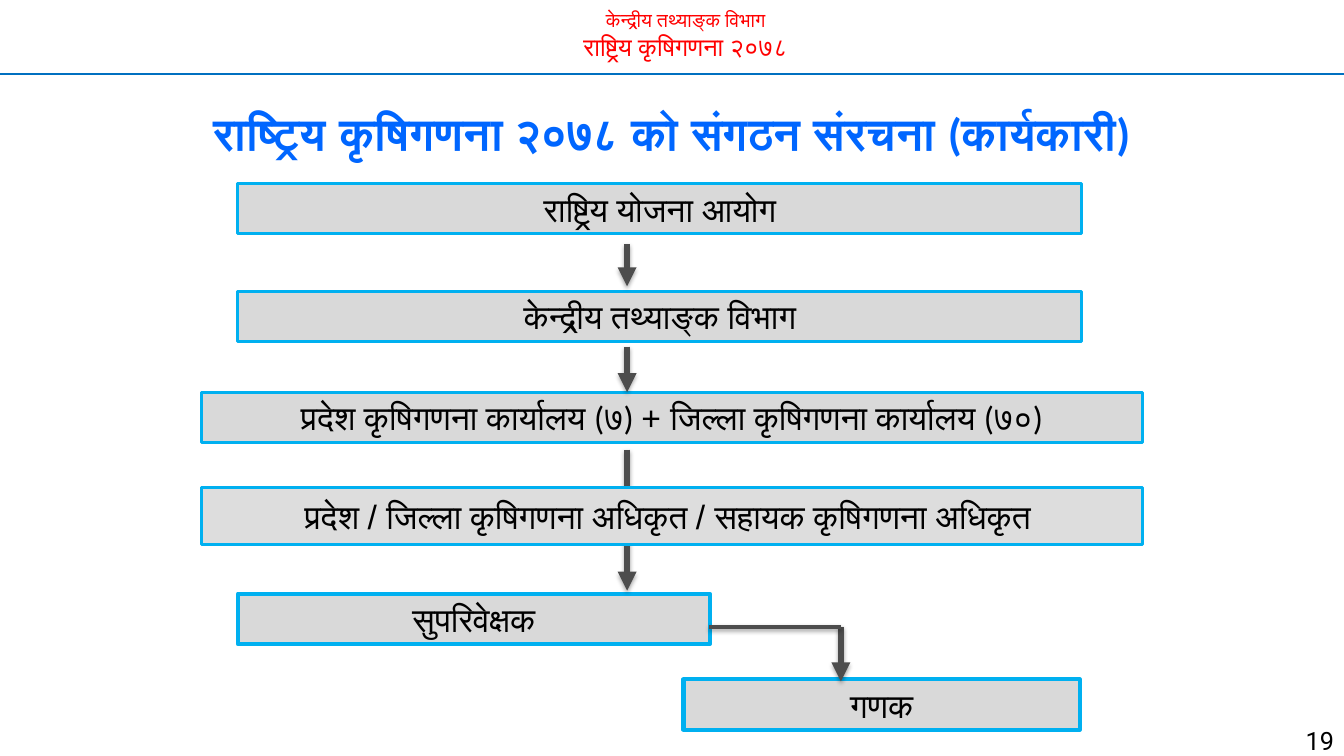
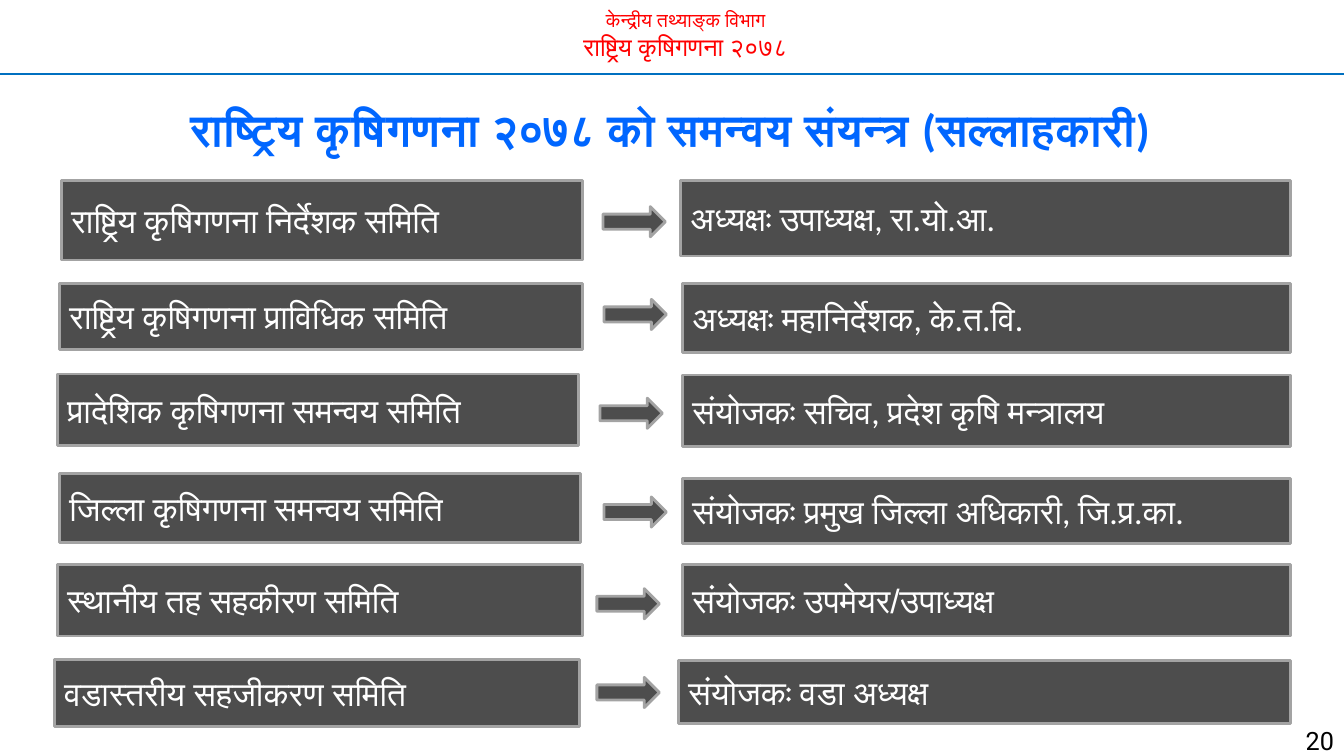
from lxml import etree
from pptx import Presentation
from pptx.dml.color import RGBColor
from pptx.enum.shapes import MSO_CONNECTOR as Connector, MSO_SHAPE as Preset
from pptx.enum.text import MSO_ANCHOR as Anchor, MSO_AUTO_SIZE as AutoSize, PP_ALIGN as Align
from pptx.oxml.ns import qn
from pptx.util import Inches, Pt

SLIDE_WIDTH, SLIDE_HEIGHT = 13.33, 7.5
RED, RULE_BLUE, TITLE_BLUE = "FF0000", "0070C0", "0066FF"
LIGHT_GREY, PALE_GREY, SKY_BLUE = "D9D9D9", "DDDDDD", "00B0F0"
DARK_GREY, EDGE_GREY, BLACK, WHITE = "4D4D4D", "A3A3A3", "000000", "FFFFFF"


def color(value):
    return RGBColor.from_string(value)


def inches(*values):
    return [Inches(value) for value in values]


def write_text(shape, text, size=24, hue=BLACK, font="Calibri", bold=False,
               align=Align.CENTER, anchor=Anchor.MIDDLE, spacing=None):
    frame = shape.text_frame
    frame.word_wrap = True
    frame.auto_size = AutoSize.NONE
    frame.vertical_anchor = anchor
    paragraph = frame.paragraphs[0]
    if paragraph.runs:
        paragraph = frame.add_paragraph()
    paragraph.alignment = align
    if spacing:
        paragraph.line_spacing = spacing
    parts = [(text, font)] if isinstance(text, str) else text
    for part, part_font in parts:
        run = paragraph.add_run()
        run.text = part
        run.font.name = part_font
        run.font.size = Pt(size)
        run.font.bold = bold
        run.font.color.rgb = color(hue)


def add_block(slide, preset, box, fill, line, weight):
    shape = slide.shapes.add_shape(preset, *inches(*box))
    shape.shadow.inherit = False
    shape.fill.solid()
    shape.fill.fore_color.rgb = color(fill)
    shape.line.color.rgb = color(line)
    shape.line.width = Pt(weight)
    return shape


def add_line(slide, start, end, hue, weight, arrow=False, shadow=False):
    line = slide.shapes.add_connector(Connector.STRAIGHT, *inches(*start, *end))
    line.line.color.rgb = color(hue)
    line.line.width = Pt(weight)
    properties = line.element.spPr
    if arrow:
        etree.SubElement(properties.find(qn("a:ln")), qn("a:tailEnd"), type="triangle")
    effects = etree.SubElement(properties, qn("a:effectLst"))
    if shadow:
        outer = etree.SubElement(effects, qn("a:outerShdw"), blurRad="40000",
                                 dist="23000", dir="5400000", rotWithShape="0")
        tint = etree.SubElement(outer, qn("a:srgbClr"), val=BLACK)
        etree.SubElement(tint, qn("a:alpha"), val="35000")
    return line


def move_header_to_master(presentation, slide):
    header = slide.shapes.add_textbox(*inches(1.25, 0.03, 11.1, 0.64))
    for text, size in (("केन्द्रीय तथ्याङ्क विभाग", 14), ("राष्ट्रिय कृषिगणना २०७८", 18)):
        write_text(header, text, size=size, hue=RED, anchor=Anchor.TOP)
    rule = add_line(slide, (0, 0.73), (SLIDE_WIDTH, 0.73), RULE_BLUE, 1.5)
    for shape in (header, rule):
        presentation.slide_master.shapes.element.append(shape.element)


def add_titled_slide(presentation, title_text, number, title_box, anchor):
    slide = presentation.slides.add_slide(presentation.slide_layouts[5])
    title = slide.shapes.title
    title.left, title.top, title.width, title.height = inches(*title_box)
    write_text(title, title_text, size=32, hue=TITLE_BLUE, bold=True,
               anchor=anchor, spacing=1.5)
    page = slide.shapes.add_textbox(*inches(12.3, 7, 1.03, 0.42))
    write_text(page, str(number), size=18, font="Roboto", align=Align.RIGHT,
               anchor=Anchor.TOP, spacing=1.5)
    return slide


def draw_hierarchy(slide, left, top, width):
    def add_level(text, x, y, level_width, height=0.5, fill=LIGHT_GREY, weight=2.25):
        box = (left + x, top + y, level_width, height)
        write_text(add_block(slide, Preset.RECTANGLE, box, fill, SKY_BLUE, weight), text)

    offices = [("प्रदेश कृषिगणना कार्यालय (७) ", "Calibri"), ("+ ", "Arial"),
               ("जिल्ला कृषिगणना कार्यालय (७०)", "Calibri")]
    officers = [("प्रदेश / जिल्ला", "Arial"), (" कृषिगणना अधिकृत", "Roboto"),
                (" / ", "Arial"), ("सहायक कृषिगणना अधिकृत ", "Roboto")]
    add_level("राष्ट्रिय योजना आयोग", 0.36, 0, 8.37)
    add_level("केन्द्रीय तथ्याङ्क विभाग", 0.36, 1.07, 8.37)
    add_level(offices, 0, 2.07, width)
    add_level("सुपरिवेक्षक", 0.36, 4.07, 4.68, weight=3)
    add_level("गणक", 4.78, 4.92, 3.93, weight=3)

    trunk, branch, bend = left + 4.22, left + 6.34, top + 4.4
    for x, start, end in ((trunk, 0.6, 1.02), (trunk, 1.62, 2.07),
                          (trunk, 2.64, 4.04), (branch, 4.4, 4.94)):
        add_line(slide, (x, top + start), (x, top + end), DARK_GREY, 4.5,
                 arrow=True, shadow=True)
    add_line(slide, (left + 5.03, bend), (branch, bend), DARK_GREY, 3, shadow=True)
    add_level(officers, 0, 3.02, width, height=0.56, fill=PALE_GREY, weight=2)


def draw_committees(slide, left, top, width):
    rows = [
        ("राष्ट्रिय कृषिगणना निर्देशक समिति", (0.11, 0, 5.17, 0.79),
         "अध्यक्षः उपाध्यक्ष, रा.यो.आ.", (6.25, 0, 0.75), (5.48, 0.26)),
        ("राष्ट्रिय कृषिगणना प्राविधिक समिति", (0.09, 1.02, 5.19, 0.66),
         "अध्यक्षः महानिर्देशक, के.त.वि.", (6.27, 1.02, 0.69), (5.49, 1.18)),
        ("प्रादेशिक कृषिगणना समन्वय समिति", (0.07, 1.92, 5.17, 0.71),
         "संयोजकः सचिव, प्रदेश कृषि मन्त्रालय", (6.27, 1.93, 0.71), (5.45, 2.16)),
        ("जिल्ला कृषिगणना समन्वय समिति", (0.09, 2.91, 5.17, 0.68),
         "संयोजकः प्रमुख जिल्ला अधिकारी, जि.प्र.का.", (6.27, 2.96, 0.64), (5.49, 3.14)),
        ("स्थानीय तह सहकीरण समिति", (0.07, 3.81, 5.21, 0.71),
         [("संयोजकः ", "Calibri"), ("उपमेयर/उपाध्यक्ष", "Arial")],
         (6.27, 3.81, 0.71), (5.42, 4.05)),
        ("वडास्तरीय सहजीकरण समिति", (0.04, 4.75, 5.21, 0.67),
         "संयोजकः वडा अध्यक्ष", (6.23, 4.76, 0.63), (5.42, 4.93)),
    ]

    def add_part(preset, x, y, part_width, height):
        box = (left + x, top + y, part_width, height)
        return add_block(slide, preset, box, DARK_GREY, EDGE_GREY, 2)

    for committee, committee_box, chair, (x, y, height), arrow in rows:
        chair_box = (x, y, width - x, height)
        for text, box in ((committee, committee_box), (chair, chair_box)):
            write_text(add_part(Preset.RECTANGLE, *box), text, hue=WHITE, align=Align.LEFT)
        add_part(Preset.RIGHT_ARROW, *arrow, 0.62, 0.3)


def main():
    presentation = Presentation()
    presentation.slide_width, presentation.slide_height = inches(SLIDE_WIDTH, SLIDE_HEIGHT)

    structure = add_titled_slide(
        presentation, "राष्ट्रिय कृषिगणना २०७८ को संगठन संरचना (कार्यकारी)", 19,
        (0, 0.75, SLIDE_WIDTH, 0.86), Anchor.MIDDLE)
    move_header_to_master(presentation, structure)
    draw_hierarchy(structure, 2, 1.82, 9.33)

    coordination = add_titled_slide(
        presentation, "राष्ट्रिय कृषिगणना २०७८ को समन्वय संयन्त्र (सल्लाहकारी)", 20,
        (-0.02, 0.69, SLIDE_WIDTH, 0.86), Anchor.TOP)
    draw_committees(coordination, 0.5, 1.79, 12.3)

    presentation.save("out.pptx")


if __name__ == "__main__":
    main()
